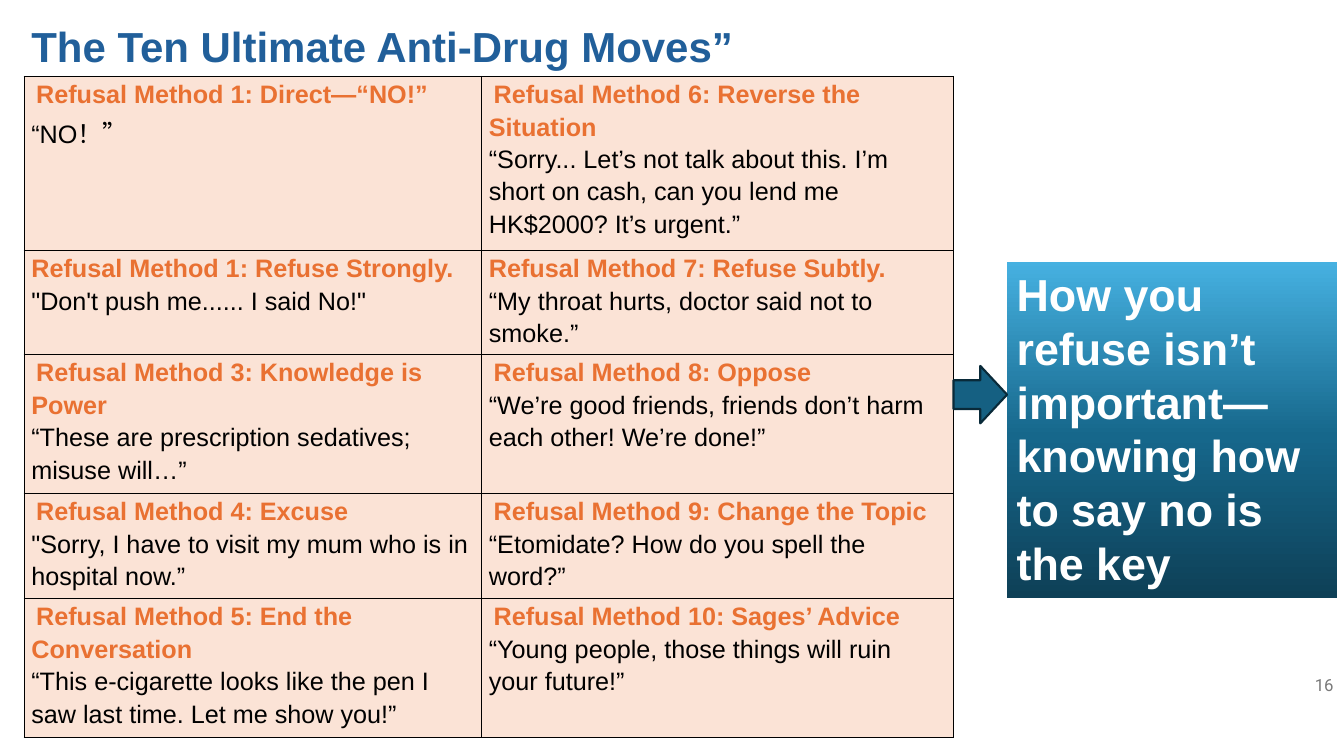
from copy import deepcopy

from lxml import etree
from pptx import Presentation
from pptx import util as u
from pptx.dml.color import RGBColor
from pptx.enum import shapes, text
from pptx.oxml.ns import qn

TITLE = "The Ten Ultimate Anti-Drug Moves”"
MOVES = [
    [("Refusal Method 1: Direct—“NO!”", "“NO！”"),
     ("Refusal Method 6: Reverse the Situation",
      "“Sorry... Let’s not talk about this. I’m short on cash, "
      "can you lend me HK$2000? It’s urgent.”")],
    [("Refusal Method 1: Refuse Strongly.",
      "\"Don't push me...... I said No!\""),
     ("Refusal Method 7: Refuse Subtly.",
      "“My throat hurts, doctor said not to smoke.”")],
    [("Refusal Method 3: Knowledge is Power",
      "“These are prescription sedatives; misuse will…”"),
     ("Refusal Method 8: Oppose",
      "“We’re good friends, friends don’t harm each other! We’re done!”")],
    [("Refusal Method 4: Excuse",
      "\"Sorry, I have to visit my mum who is in hospital now.”"),
     ("Refusal Method 9: Change the Topic",
      "“Etomidate? How do you spell the word?”")],
    [("Refusal Method 5: End the Conversation",
      "“This e-cigarette looks like the pen I saw last time. "
      "Let me show you!”"),
     ("Refusal Method 10: Sages’ Advice",
      "“Young people, those things will ruin your future!”")],
]
FLUSH_ROW = 1  # the one row whose headings are not indented
COLS = [11.53, 11.89]
ROWS = [4.39, 2.62, 3.5, 2.65, 3.5]
LEFT, TOP = 0.61, 1.93
KEY = "How you refuse isn’t important—knowing how to say no is the key"
STOPS = [(0, "0E4057"), (0.48, "16678B"), (1, "46B1E1")]
PAGE = "16"


def rgb(code):
    return RGBColor.from_string(code)


def style(para, size, color, bold=False, face="Arial"):
    font = para.font
    font.name, font.size, font.bold = face, u.Pt(size), bold
    font.color.rgb = rgb(color)


def box(*cm):
    return [u.Cm(n) for n in cm]


def edge(cell):
    """Draw a thin black line on all four sides of a cell."""
    props = cell._tc.get_or_add_tcPr()
    for spot, side in enumerate(("lnL", "lnR", "lnT", "lnB")):
        line = etree.Element(qn("a:" + side), w=str(u.Pt(1)))
        fill = etree.SubElement(line, qn("a:solidFill"))
        etree.SubElement(fill, qn("a:srgbClr"), val="000000")
        props.insert(spot, line)


def write(cell, move, inset):
    cell.margin_left = cell.margin_right = u.Cm(0.18)
    cell.margin_top = cell.margin_bottom = 0
    cell.fill.solid()
    cell.fill.fore_color.rgb = rgb("FBE3D6")
    edge(cell)
    frame = cell.text_frame
    frame.text = "\n".join(move)
    head, quote = frame.paragraphs
    style(head, 18, "E97132", True)
    style(quote, 18, "000000")
    head.line_spacing = quote.line_spacing = 1.15
    if inset:
        head._p.get_or_add_pPr().set("indent", str(u.Cm(0.12)))


def add_title(slide):
    title = slide.shapes.title
    title.left, title.top, title.width, title.height = box(-0.46, 0, 23.42, 1.93)
    frame = title.text_frame
    frame.text = TITLE
    frame.margin_left = u.Cm(1.25)
    frame.vertical_anchor = text.MSO_ANCHOR.MIDDLE
    para = frame.paragraphs[0]
    para.alignment = text.PP_ALIGN.LEFT
    para.line_spacing = 1.3
    style(para, 30, "215F9A", True)


def add_moves(slide):
    place = box(LEFT, TOP, sum(COLS), sum(ROWS))
    table = slide.shapes.add_table(len(ROWS), len(COLS), *place).table
    table.first_row = table.horz_banding = False
    for col, wide in zip(table.columns, COLS):
        col.width = u.Cm(wide)
    for r, (row, high) in enumerate(zip(table.rows, ROWS)):
        row.height = u.Cm(high)
        for cell, move in zip(row.cells, MOVES[r]):
            write(cell, move, r != FLUSH_ROW)


def add_page(slide):
    frame = slide.shapes.add_textbox(*box(31.24, 16.74, 2.62, 1.02)).text_frame
    frame.word_wrap = True
    frame.vertical_anchor = text.MSO_ANCHOR.MIDDLE
    frame.text = PAGE
    para = frame.paragraphs[0]
    para.alignment = text.PP_ALIGN.RIGHT
    style(para, 12, "797979", face="Roboto")


def add_key(slide):
    group = slide.shapes.add_group_shape().shapes
    kind = shapes.MSO_SHAPE
    panel = group.add_shape(kind.RECTANGLE, *box(25.37, 6.6, 8.33, 8.46))
    arrow = group.add_shape(kind.RIGHT_ARROW, *box(24.03, 9.22, 1.35, 1.45))
    panel.shadow.inherit = arrow.shadow.inherit = False

    panel.line.fill.background()
    panel.fill.gradient()
    panel.fill.gradient_angle = 90
    first = panel._element.find(".//" + qn("a:gs"))
    first.addnext(deepcopy(first))
    for stop, (spot, color) in zip(panel.fill.gradient_stops, STOPS):
        stop.position = spot
        stop.color.rgb = rgb(color)
    frame = panel.text_frame
    frame.word_wrap = True
    frame.vertical_anchor = text.MSO_ANCHOR.TOP
    frame.text = KEY
    para = frame.paragraphs[0]
    para.alignment = text.PP_ALIGN.LEFT
    para.space_after = u.Pt(6)
    style(para, 32, "FFFFFF", True)

    arrow.fill.solid()
    arrow.fill.fore_color.rgb = rgb("156082")
    arrow.line.color.rgb = rgb("092A39")
    arrow.line.width = u.Pt(1.5)


def main():
    deck = Presentation()
    deck.slide_width, deck.slide_height = box(33.87, 19.05)
    slide = deck.slides.add_slide(deck.slide_layouts[5])
    add_title(slide)
    add_moves(slide)
    add_page(slide)
    add_key(slide)
    deck.save("out.pptx")


if __name__ == "__main__":
    main()
